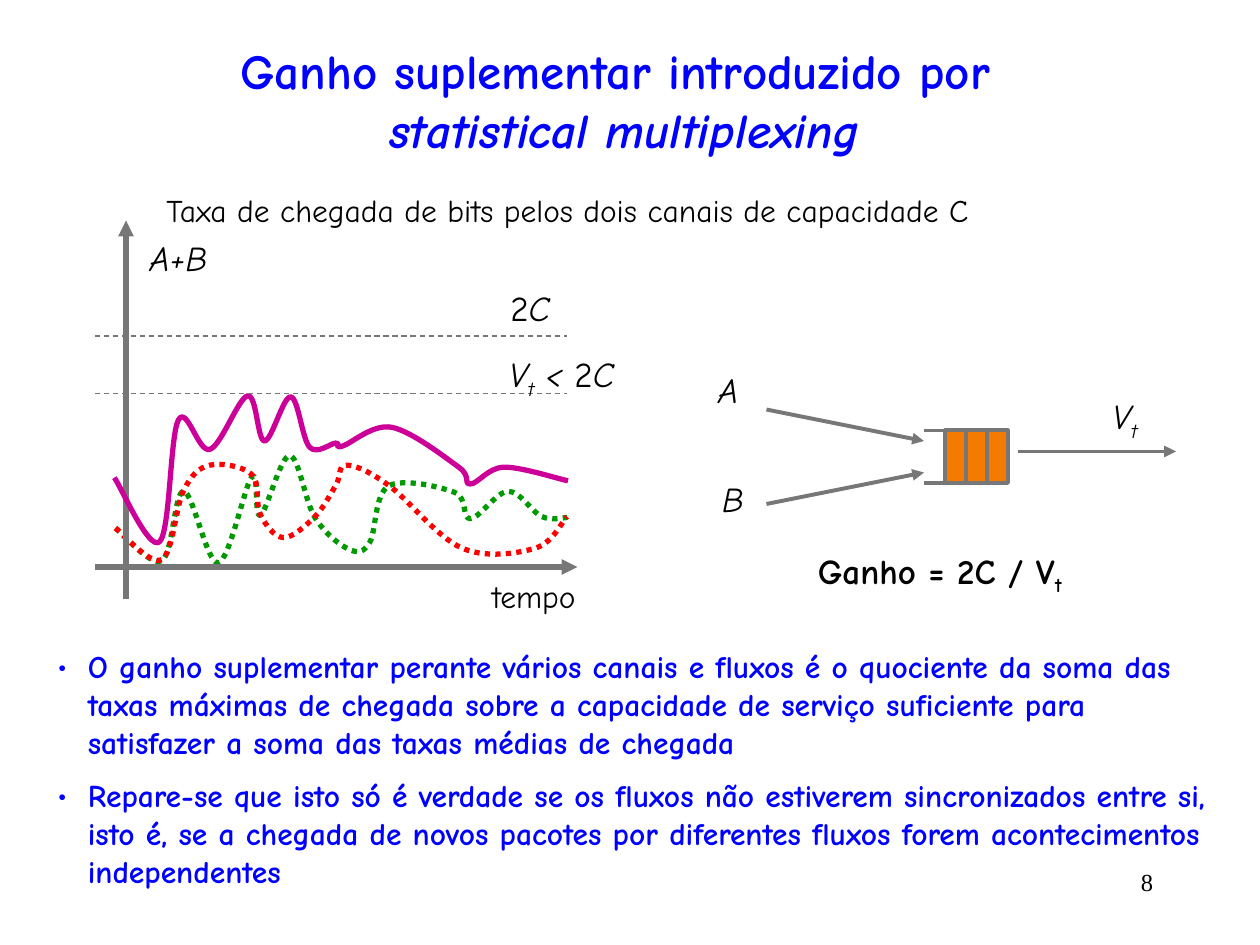
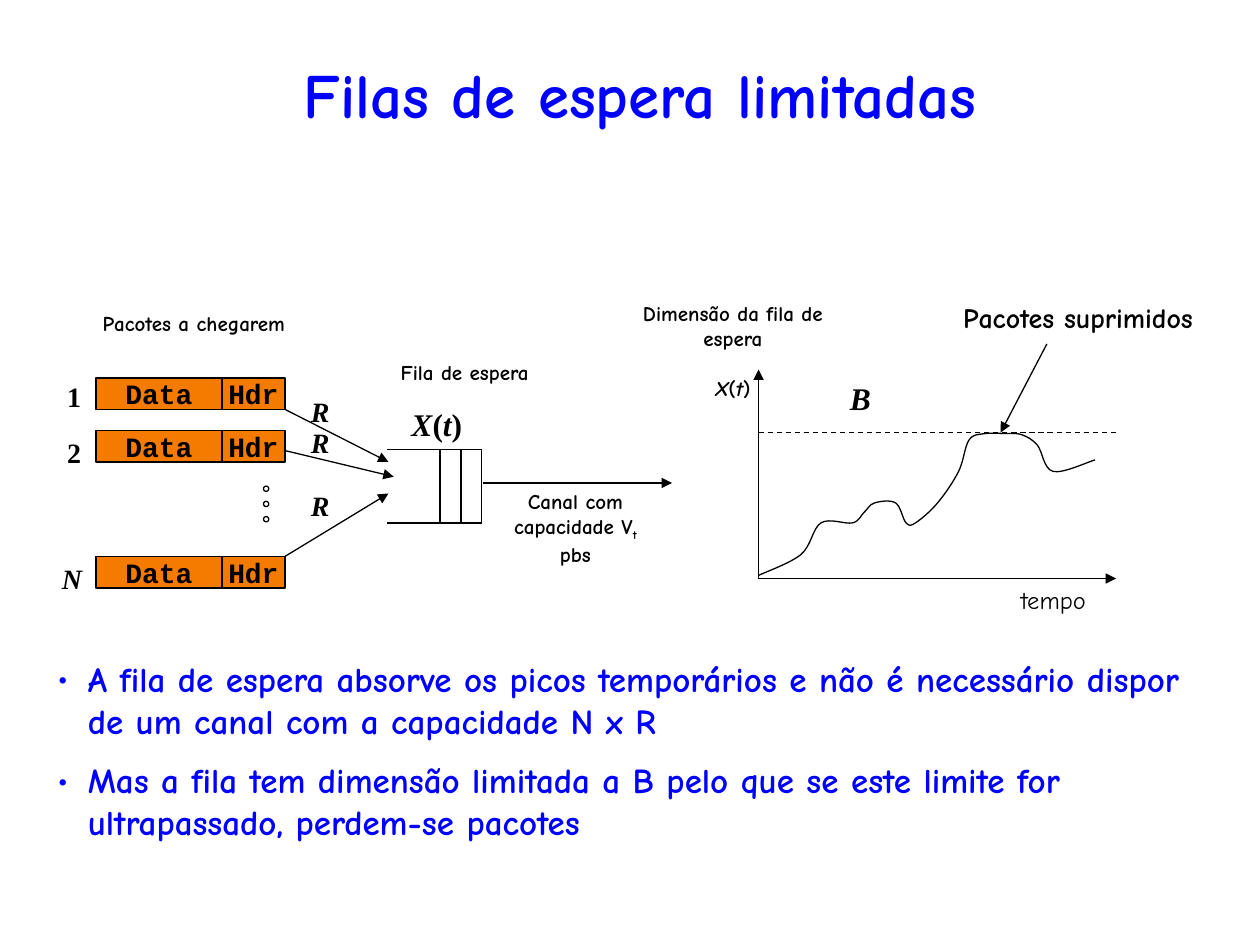
import dataclasses
import pptx
import pptx.util
import pptx.dml.color
import pptx.enum.dml
import pptx.enum.shapes
import pptx.enum.text
from lxml import etree

Pt = pptx.util.Pt
Align = pptx.enum.text.PP_ALIGN
Dash = pptx.enum.dml.MSO_LINE
Kind = pptx.enum.shapes.MSO_SHAPE
Join = pptx.enum.shapes.MSO_CONNECTOR
MID = pptx.enum.text.MSO_ANCHOR.MIDDLE
NS = "{http://schemas.openxmlformats.org/drawingml/2006/main}"


def rgb(code):
    return pptx.dml.color.RGBColor.from_string(code)


@dataclasses.dataclass(frozen=True)
class Theme:
    blue: str = "0000FF"
    black: str = "000000"
    gray: str = "777777"
    orange: str = "F47A00"
    green: str = "009900"
    red: str = "FF0000"
    plum: str = "CC0099"
    sans: str = "Comic Neue"
    serif: str = "Times New Roman"
    mono: str = "Courier New"
    huge: int = 36
    head: int = 28
    big: int = 20
    mid: int = 18
    body: int = 16
    small: int = 14
    tiny: int = 12
    thin: float = 0.75
    thick: float = 2.25
    bold: float = 3


T = Theme()

deck = pptx.Presentation()
deck.slide_width = pptx.util.Inches(10)
deck.slide_height = pptx.util.Inches(7.5)
CELL = deck.slide_width // 120  # grid of 120 columns by 90 rows


def write(page, box, paras, size, font=T.sans, color=T.black, bold=False,
          align=Align.CENTER, wrap=False, gap=0, dot=False, fill=None):
    """Put text in a box given in cells; a run is (text, marks), i = italic, s = subscript."""
    place = [round(v * CELL) for v in box]
    if fill:
        shape = page.shapes.add_shape(Kind.RECTANGLE, *place)
        shape.shadow.inherit = False
        shape.fill.solid()
        shape.fill.fore_color.rgb = rgb(fill)
        shape.line.color.rgb = rgb(T.black)
        shape.line.width = Pt(T.thin)
    else:
        shape = page.shapes.add_textbox(*place)
    frame = shape.text_frame
    frame.word_wrap = wrap
    if fill or size in (T.head, T.huge):
        frame.vertical_anchor = MID
    for n, runs in enumerate(paras):
        para = frame.add_paragraph() if n else frame.paragraphs[0]
        para.alignment = align
        if n and gap:
            para.space_before = Pt(gap)
        if dot:
            props = para._p.get_or_add_pPr()
            inset = round(2.88 * CELL)
            props.set("marL", str(inset))
            props.set("indent", str(-inset))
            etree.SubElement(props, NS + "buFont").set("typeface", font)
            etree.SubElement(props, NS + "buChar").set("char", "•")
        for text, marks in runs:
            if text == "\n":
                para.add_line_break()
                continue
            run = para.add_run()
            run.text = text
            look = dict(size=Pt(size), name=font, bold=bold, italic="i" in marks)
            for key, val in look.items():
                setattr(run.font, key, val)
            run.font.color.rgb = rgb(color)
            if "s" in marks:
                run._r.get_or_add_rPr().set("baseline", "-25000")


def draw(page, dots, color=T.black, width=T.thin, dash=None, arrow=False):
    """Join two points with a straight line, or more with a smooth curve."""
    spots = [(round(x * CELL), round(y * CELL)) for x, y in dots]
    if len(spots) == 2:
        shape = page.shapes.add_connector(Join.STRAIGHT, *spots[0], *spots[1])
        etree.SubElement(shape._element.spPr, NS + "effectLst")
    else:
        pen = page.shapes.build_freeform(*spots[0])
        pen.add_line_segments(spots[1:], close=False)
        shape = pen.convert_to_shape()
        shape.shadow.inherit = False
        shape.fill.background()
        local = [(x - shape.left, y - shape.top) for x, y in spots]
        local = [local[0], *local, local[-1]]
        for i, step in enumerate(list(shape._element.iter(NS + "lnTo"))):
            past, a, b, after = local[i:i + 4]
            step.tag = NS + "cubicBezTo"
            step.remove(step[0])
            for x, y in ([a[d] + (b[d] - past[d]) / 6 for d in (0, 1)],
                         [b[d] - (after[d] - a[d]) / 6 for d in (0, 1)], b):
                etree.SubElement(step, NS + "pt", x=str(round(x)), y=str(round(y)))
    shape.line.color.rgb = rgb(color)
    shape.line.width = Pt(width)
    if dash:
        shape.line.dash_style = dash
    if arrow:
        etree.SubElement(shape.line._get_or_add_ln(), NS + "tailEnd").set("type", "triangle")


blank = deck.slide_layouts[6]
gain, queue = deck.slides.add_slide(blank), deck.slides.add_slide(blank)

# Titles and bullets of both slides
for page, box, size, runs in (
    (gain, (4.4, 5, 110, 9), T.head,
     [("Ganho suplementar introduzido por ", ""), ("\n", ""), ("statistical multiplexing", "i")]),
    (queue, (9.96, 3.45, 102, 10.9), T.huge, [("Filas de espera limitadas", "")]),
):
    write(page, box, [runs], size, color=T.blue, bold=True, wrap=True)

for page, top, size, points in (
    (gain, 61.05, T.mid, (
        "O ganho suplementar perante vários canais e fluxos é o quociente da soma das taxas máximas "
        "de chegada sobre a capacidade de serviço suficiente para satisfazer a soma das taxas médias "
        "de chegada",
        "Repare-se que isto só é verdade se os fluxos não estiverem sincronizados entre si, isto é, "
        "se a chegada de novos pacotes por diferentes fluxos forem acontecimentos independentes")),
    (queue, 62, T.big, (
        "A fila de espera absorve os picos temporários e não é necessário dispor de um canal com a "
        "capacidade N x R",
        "Mas a fila tem dimensão limitada a B pelo que se este limite for ultrapassado, perdem-se "
        "pacotes")),
):
    write(page, (4.3, top, 113, 22), [[(p, "")] for p in points], size, color=T.blue, bold=True,
          align=Align.LEFT, wrap=True, gap=size / 2, dot=True)

# Slide 1: shared queue
write(gain, (86, 82, 25, 6), [[("8", "")]], T.small, T.serif, align=Align.RIGHT, wrap=True)
for start, end in (((73, 39), (88, 42)), ((73, 48), (88, 45)), ((97, 43), (112, 43))):
    draw(gain, (start, end), T.gray, T.thick, arrow=True)
for n in range(3):
    slot = gain.shapes.add_shape(Kind.RECTANGLE, *(v * CELL for v in (90 + 2 * n, 41, 2, 5)))
    slot.shadow.inherit = False
    slot.fill.solid()
    slot.fill.fore_color.rgb = rgb(T.orange)
    slot.line.color.rgb = rgb(T.gray)
    slot.line.width = Pt(T.thick)
for row in (41, 46):
    draw(gain, ((88, row), (92, row)), T.gray, T.thick)

# Slide 1: arrival rates over time
flows = (
    (T.green, Dash.ROUND_DOT, (
        (11, 50.3), (15.4, 53.4), (17.5, 46.8), (20.8, 53.6), (24, 45.4), (24.8, 49.1),
        (27.6, 43.4), (30, 49.3), (33.2, 52.3), (35.2, 51.7), (37, 46.3), (43.3, 46.9),
        (44.8, 49.4), (48.4, 46.8), (51.6, 49.2), (54, 49.3))),
    (T.red, Dash.ROUND_DOT, (
        (11, 50.3), (15.4, 53.3), (17.5, 46.7), (20, 44.3), (24, 45.2), (24.8, 49), (27, 51.2),
        (30, 49.2), (32, 46.2), (33, 44.3), (37, 46.2), (44, 52.2), (51, 52.2), (54, 49.2))),
    (T.gray, None, ((12, 57), (12, 21))),
    (T.gray, None, ((9, 54), (55, 54))),
    (T.plum, None, (
        (10.9, 45.5), (15.2, 51.6), (17, 40), (20, 42.8), (23.6, 37.7), (25.2, 42), (27.7, 37.8),
        (29.5, 42.6), (32, 42.2), (32.6, 42.5), (37.3, 40.7), (43.7, 44.5), (44.8, 46.1),
        (48, 44.5), (54.1, 45.8))),
)
for color, dash, dots in flows:
    draw(gain, dots, color, T.bold, dash, arrow=len(dots) == 2)
for row in (37.5, 32):
    draw(gain, ((9, row), (54, row)), T.gray, T.thin, Dash.DASH)

for box, size, bold, runs in (
    ((66.3, 34.5, 6.1, 5.3), T.big, False, [("A", "i")]),
    ((66.9, 44.9, 5.8, 5.3), T.big, False, [("B", "i")]),
    ((103.8, 37, 6.7, 5.3), T.big, False, [("V", "i"), ("t", "is")]),
    ((46.8, 26.7, 7.4, 5.3), T.big, False, [("2", ""), ("C", "i")]),
    ((46.3, 33, 14.4, 5.3), T.big, False,
     [("V", "i"), ("t", "is"), (" < ", "i"), ("2", ""), ("C", "i")]),
    ((12.1, 21.9, 9.8, 5.3), T.big, False, [("A+B", "i")]),
    ((45.1, 54.4, 11.5, 4.8), T.mid, False, [("tempo", "")]),
    ((11.8, 17.6, 84.5, 4.8), T.mid, False,
     [("Taxa de chegada de bits pelos dois canais de capacidade C", "")]),
    ((74, 51.7, 31.7, 5.3), T.big, True, [("Ganho = 2C / V", ""), ("t ", "s")]),
):
    write(gain, box, [runs], size, bold=bold)

# Slide 2: queue, links and packets
for row in (42.84, 49.8):
    draw(queue, ((36.9, row), (45.86, row)))
for col in (41.9, 43.9, 45.86):
    draw(queue, ((col, 42.84), (col, 49.8)))
for start, end in (
    ((46, 46), (64, 46)), ((25, 37.9), (37, 44)), ((25, 42.4), (37.5, 45.4)),
    ((24.5, 54.6), (37, 47)), ((72.25, 55.1), (72.25, 35.2)), ((72.25, 55.1), (106.3, 55.1)),
    ((99.7, 32.76), (95.3, 41.2)),
):
    draw(queue, (start, end), arrow=True)
for n in range(3):
    ring = queue.shapes.add_shape(
        Kind.OVAL, *(round(v * CELL) for v in (25.1, 46.3 + 1.45 * n, 0.5, 0.5)))
    ring.shadow.inherit = False
    ring.fill.background()
    ring.line.color.rgb = rgb(T.black)
    ring.line.width = Pt(T.thin)
for row in (36, 41, 53):
    for col, wide, word in ((9.14, 12, "Data"), (21.14, 6, "Hdr")):
        write(queue, (col, row, wide, 3), [[(word, "")]], T.body, T.mono, bold=True, fill=T.orange)

# Slide 2: queue size over time
draw(queue, ((72.25, 41.2), (106.3, 41.2)), dash=Dash.DASH)
draw(queue, (
    (72.25, 54.8), (76.3, 52.8), (78.2, 49.8), (81.2, 49.8), (82.3, 48.8), (83.3, 47.9),
    (85.3, 47.9), (86.3, 49.8), (87.2, 49.8), (89.3, 47.9), (91.3, 44.9), (92.3, 41.9),
    (93.8, 41.3), (95.8, 41.3), (97.3, 41.4), (98.8, 42.4), (100.3, 44.9), (104.3, 43.8)))

depth = [("X", "i"), ("(", ""), ("t", "i"), (")", "")]
for box, paras, size, align in (
    ((87.4, 28, 27.4, 4.4), [[("Pacotes suprimidos", "")]], T.body, Align.RIGHT),
    ((60, 28, 19.6, 10.9), [[("Dimensão da fila de espera", "")], depth], T.tiny, Align.CENTER),
    ((34.46, 33.7, 19.6, 3.6), [[("Fila de espera", "")]], T.tiny, Align.CENTER),
    ((5.2, 28.96, 26.5, 3.6), [[("Pacotes a chegarem", "")]], T.tiny, Align.CENTER),
    ((47.7, 45.9, 14.2, 8.5), [[("Canal com capacidade V", ""), ("t ", "s"), ("pbs", "")]],
     T.tiny, Align.CENTER),
):
    write(queue, box, paras, size, bold=True, align=align, wrap=True, gap=14)
write(queue, (94, 55.1, 10.6, 4), [[("tempo", "")]], T.small, align=Align.RIGHT, wrap=True)

for box, runs, size in (
    ((37.8, 38, 7.6, 4.8), depth, T.mid),
    ((79.2, 35.5, 5.5, 4.8), [("B", "i")], T.mid),
    ((5.2, 35.6, 3.7, 4.4), [("1", "")], T.body),
    ((5.2, 40.9, 3.7, 4.4), [("2", "")], T.body),
    ((4.2, 52.9, 5.3, 4.4), [("N", "i")], T.body),
    *(((27.9, row, 5.2, 4.4), [("R", "i")], T.body) for row in (37, 39.9, 45.9)),
):
    write(queue, box, [runs], size, T.serif, bold=True)

deck.save("out.pptx")
